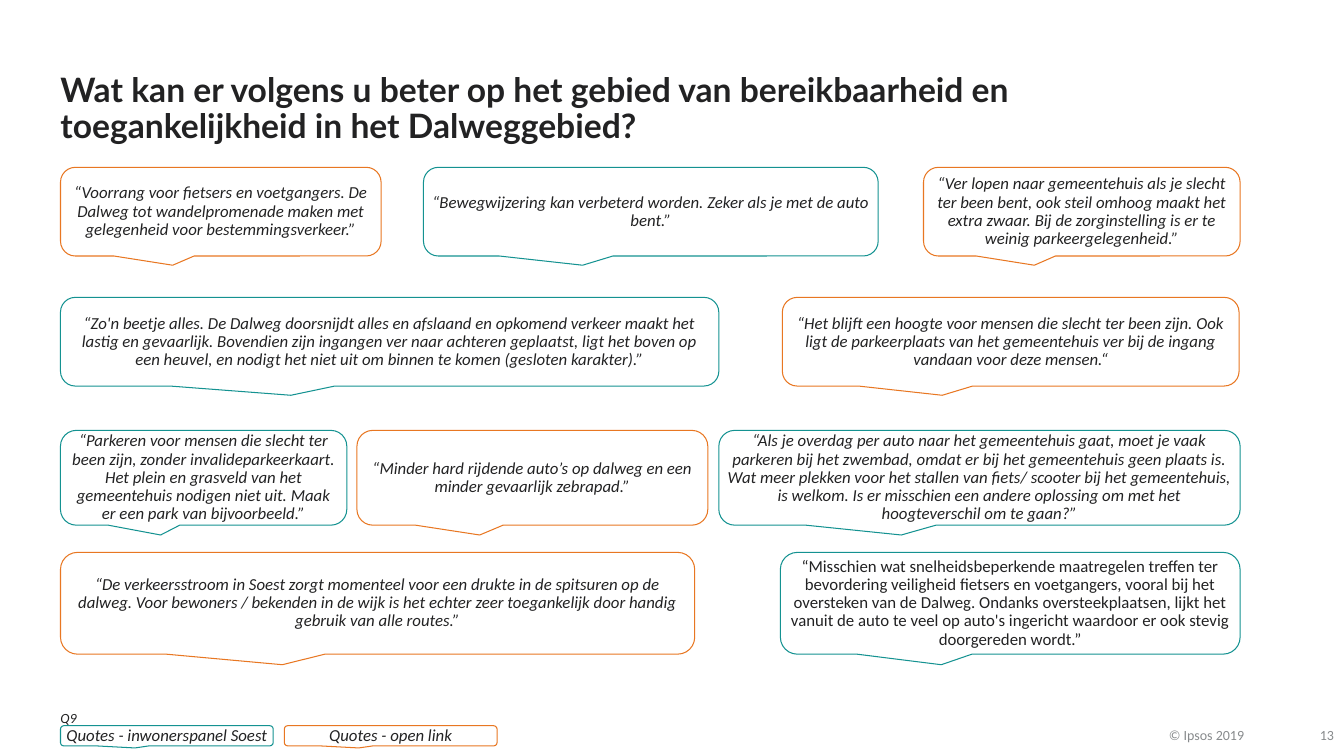
from dataclasses import dataclass
from pptx import Presentation
from pptx.dml.color import RGBColor
from pptx.enum.shapes import MSO_SHAPE
from pptx.enum.text import MSO_ANCHOR, MSO_AUTO_SIZE, PP_ALIGN
from pptx.util import Inches, Pt


@dataclass
class Theme:
    ink: str = "222223"
    gray: str = "888B8D"
    teal: str = "149291"
    orange: str = "E87722"
    head: str = "Lato"
    body: str = "Calibri"
    big: int = 24
    mid: int = 12
    small: int = 10


theme = Theme()


def write(shape, text, size, color, align, anchor, pad=0, space=0.9,
          font=theme.body, bold=False, italic=False, wrap=True):
    frame = shape.text_frame
    frame.text = text
    frame.auto_size = MSO_AUTO_SIZE.NONE
    frame.word_wrap = wrap
    frame.vertical_anchor = anchor
    frame.margin_left = frame.margin_right = Inches(pad)
    frame.margin_top = frame.margin_bottom = Inches(pad)
    line = frame.paragraphs[0]
    line.alignment = align
    line.line_spacing = space
    line.space_before = Pt(0)
    line.font.name = font
    line.font.size = Pt(size)
    line.font.bold = bold
    line.font.italic = italic
    line.font.color.rgb = RGBColor.from_string(color)


def add_quote(left, top, width, height, color, text, italic=True):
    box = slide.shapes.add_shape(
        MSO_SHAPE.ROUNDED_RECTANGULAR_CALLOUT,
        Inches(left), Inches(top), Inches(width), Inches(height))
    for i, value in enumerate((-0.15, 0.604, 0.167)):
        box.adjustments[i] = value
    box.shadow.inherit = False
    box.fill.background()
    box.line.color.rgb = RGBColor.from_string(color)
    box.line.width = Pt(0.75)
    write(box, text, theme.mid, theme.ink, PP_ALIGN.CENTER,
          MSO_ANCHOR.MIDDLE, pad=0.04, italic=italic)


deck = Presentation()
deck.slide_width, deck.slide_height = Inches(13.33), Inches(7.5)
slide = deck.slides.add_slide(deck.slide_layouts[5])

# Title
title = slide.shapes.title
title.left, title.top = Inches(0.6), Inches(0.73)
title.width, title.height = Inches(11.86), Inches(0.74)
write(title, "Wat kan er volgens u beter op het gebied van bereikbaarheid en "
      "toegankelijkheid in het Dalweggebied?", theme.big, theme.ink,
      PP_ALIGN.LEFT, MSO_ANCHOR.TOP, font=theme.head, bold=True)

# Quotes by row: top, height, then left, width, color, text of each
rows = [
    (1.66, 0.88, [
        (0.6, 3.18, theme.orange,
         "“Voorrang voor fietsers en voetgangers. De Dalweg tot "
         "wandelpromenade maken met gelegenheid voor bestemmingsverkeer.”"),
        (4.2, 4.51, theme.teal,
         "“Bewegwijzering kan verbeterd worden. Zeker als je met de auto "
         "bent.”"),
        (9.16, 3.14, theme.orange,
         "“Ver lopen naar gemeentehuis als je slecht ter been bent, ook "
         "steil omhoog maakt het extra zwaar. Bij de zorginstelling is er te "
         "weinig parkeergelegenheid.”"),
    ]),
    (2.95, 0.88, [
        (0.6, 6.53, theme.teal,
         "“Zo'n beetje alles. De Dalweg doorsnijdt alles en afslaand en "
         "opkomend verkeer maakt het lastig en gevaarlijk. Bovendien zijn "
         "ingangen ver naar achteren geplaatst, ligt het boven op een "
         "heuvel, en nodigt het niet uit om binnen te komen (gesloten "
         "karakter).”"),
        (7.76, 4.53, theme.orange,
         "“Het blijft een hoogte voor mensen die slecht ter been zijn. Ook "
         "ligt de parkeerplaats van het gemeentehuis ver bij de ingang "
         "vandaan voor deze mensen.“"),
    ]),
    (4.27, 0.94, [
        (0.6, 2.84, theme.teal,
         "“Parkeren voor mensen die slecht ter been zijn, zonder "
         "invalideparkeerkaart. Het plein en grasveld van het gemeentehuis "
         "nodigen niet uit. Maak er een park van bijvoorbeeld.”"),
        (3.54, 3.48, theme.orange,
         "“Minder hard rijdende auto’s op dalweg en een minder gevaarlijk "
         "zebrapad.”"),
        (7.13, 5.17, theme.teal,
         "“Als je overdag per auto naar het gemeentehuis gaat, moet je vaak "
         "parkeren bij het zwembad, omdat er bij het gemeentehuis geen "
         "plaats is. Wat meer plekken voor het stallen van fiets/ scooter "
         "bij het gemeentehuis, is welkom. Is er misschien een andere "
         "oplossing om met het hoogteverschil om te gaan?”"),
    ]),
    (5.48, 1.01, [
        (0.6, 6.29, theme.orange,
         "“De verkeersstroom in Soest zorgt momenteel voor een drukte in de "
         "spitsuren op de dalweg. Voor bewoners / bekenden in de wijk is het "
         "echter zeer toegankelijk door handig gebruik van alle routes.”"),
        (7.74, 4.56, theme.teal,
         "“Misschien wat snelheidsbeperkende maatregelen treffen ter "
         "bevordering veiligheid fietsers en voetgangers, vooral bij het "
         "oversteken van de Dalweg. Ondanks oversteekplaatsen, lijkt het "
         "vanuit de auto te veel op auto's ingericht waardoor er ook stevig "
         "doorgereden wordt.”", False),
    ]),
    # Legend
    (7.2, 0.2, [
        (0.6, 2.11, theme.teal, "Quotes - inwonerspanel Soest"),
        (2.82, 2.11, theme.orange, "Quotes - open link"),
    ]),
]
for top, height, quotes in rows:
    for left, width, *rest in quotes:
        add_quote(left, top, width, height, *rest)

# Question label, copyright line and page number
notes = [
    (0.6, 7.04, 11.76, 0.17, "Q9", theme.ink, PP_ALIGN.LEFT, 1.0, True),
    (11.38, 7.12, 0.96, 0.25, "© Ipsos 2019", theme.gray, PP_ALIGN.RIGHT,
     0.85, False),
    (12.78, 7.02, 0.45, 0.35, "13", theme.gray, PP_ALIGN.RIGHT, 0.85, False),
]
for left, top, width, height, text, color, align, space, label in notes:
    box = slide.shapes.add_textbox(
        Inches(left), Inches(top), Inches(width), Inches(height))
    write(box, text, theme.small, color, align, MSO_ANCHOR.BOTTOM,
          space=space, italic=label, wrap=label)

deck.save("out.pptx")
